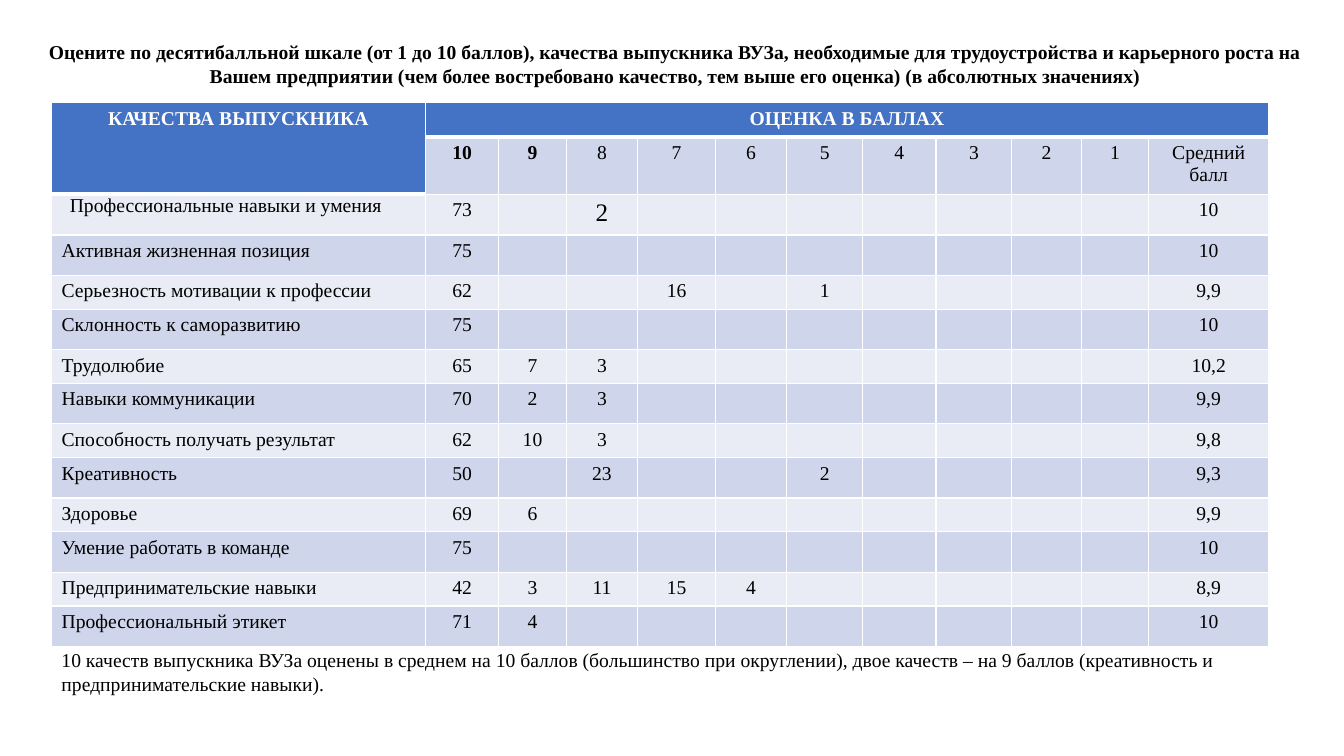
from lxml.etree import SubElement
from pptx import Presentation
from pptx.dml.color import RGBColor as RGB
from pptx.enum.text import MSO_AUTO_SIZE as AUTO, PP_ALIGN as AL
from pptx.oxml.ns import qn
from pptx.util import Cm, Pt

TITLE = ("Оцените по десятибалльной шкале (от 1 до 10 баллов), качества выпускника ВУЗа, "
         "необходимые для трудоустройства и карьерного роста на Вашем предприятии "
         "(чем более востребовано качество, тем выше его оценка) (в абсолютных значениях)")
NOTE = ("10 качеств выпускника ВУЗа оценены в среднем на 10 баллов (большинство при округлении), "
        "двое качеств – на 9 баллов (креативность и предпринимательские навыки).")
HEADS = ("КАЧЕСТВА ВЫПУСКНИКА", "ОЦЕНКА В БАЛЛАХ")
SCORES = list(range(10, 0, -1))
AVERAGE = "Средний\nбалл"
# quality, {score: number of answers}, average
QUALITIES = [
    ("Профессиональные навыки и умения", {10: 73, 8: 2}, "10"),
    ("Активная жизненная позиция", {10: 75}, "10"),
    ("Серьезность мотивации к профессии", {10: 62, 7: 16, 5: 1}, "9,9"),
    ("Склонность к саморазвитию", {10: 75}, "10"),
    ("Трудолюбие", {10: 65, 9: 7, 8: 3}, "10,2"),
    ("Навыки коммуникации", {10: 70, 9: 2, 8: 3}, "9,9"),
    ("Способность получать результат", {10: 62, 9: 10, 8: 3}, "9,8"),
    ("Креативность", {10: 50, 8: 23, 5: 2}, "9,3"),
    ("Здоровье", {10: 69, 9: 6}, "9,9"),
    ("Умение работать в команде", {10: 75}, "10"),
    ("Предпринимательские навыки", {10: 42, 9: 3, 8: 11, 7: 15, 6: 4}, "8,9"),
    ("Профессиональный этикет", {10: 71, 9: 4}, "10"),
]
COLORS = {"head": "4472C4", "dark": "CFD5EA", "light": "E9EBF5",
          "white": "FFFFFF", "black": "000000"}
FONT = "Times New Roman"
COL_W = [9.42, 1.85, 1.7, 1.8, 1.96, 1.8, 1.91, 1.85, 1.91, 1.75, 1.7, 3.02]
ROW_H = [0.86, 1.44, 1.03] + [1.02, 0.85] * 5 + [1.02]


def write(tf, text, align=AL.CENTER, color="black", bold=False, size=14):
    tf.text = text
    for p in tf.paragraphs:
        p.alignment = align
        p.font.name, p.font.size, p.font.bold = FONT, Pt(size), bold
        p.font.color.rgb = RGB.from_string(COLORS[color])


def add_text(slide, left, top, width, height, text, **style):
    tf = slide.shapes.add_textbox(Cm(left), Cm(top), Cm(width), Cm(height)).text_frame
    tf.word_wrap = True
    tf.auto_size = AUTO.SHAPE_TO_FIT_TEXT
    write(tf, text, **style)


def paint(cell, fill, bottom=1):
    """Give a cell white borders and a fill; bottom is the lower border in points."""
    tc_pr = cell._tc.get_or_add_tcPr()
    for side, width in (("L", 1), ("R", 1), ("T", 1), ("B", bottom)):
        ln = SubElement(tc_pr, qn(f"a:ln{side}"), w=str(Pt(width)))
        solid = SubElement(ln, qn("a:solidFill"))
        SubElement(solid, qn("a:srgbClr"), val=COLORS["white"])
    cell.fill.solid()
    cell.fill.fore_color.rgb = RGB.from_string(COLORS[fill])


def add_ratings(slide):
    table = slide.shapes.add_table(len(ROW_H), len(COL_W), Cm(1.3), Cm(2.59),
                                   Cm(sum(COL_W)), Cm(sum(ROW_H))).table
    for col, w in zip(table.columns, COL_W):
        col.width = Cm(w)
    for row, h in zip(table.rows, ROW_H):
        row.height = Cm(h)

    rows = [[HEADS[0], HEADS[1]] + [""] * len(SCORES),
            [""] + [str(s) for s in SCORES] + [AVERAGE]]
    rows += [[name] + [str(marks.get(s, "")) for s in SCORES] + [avg]
             for name, marks, avg in QUALITIES]
    for r, texts in enumerate(rows):
        for c, text in enumerate(texts):
            cell = table.cell(r, c)
            head = r == 0 or (r == 1 and c == 0)
            paint(cell, "head" if head else "dark" if r % 2 else "light", 3 if head else 1)
            write(cell.text_frame, text,
                  align=AL.LEFT if r > 1 and c == 0 else AL.CENTER,
                  color="white" if head else "black",
                  bold=head or (r == 1 and c < 3),
                  size=18 if (r, c) == (2, 3) else 14)
    table.cell(0, 0).merge(table.cell(1, 0))
    table.cell(0, 1).merge(table.cell(0, len(COL_W) - 1))

    first = table.cell(2, 0)
    first.margin_left = Cm(0.46)
    first.text_frame.paragraphs[0].line_spacing = Pt(12.4)


def main():
    prs = Presentation()
    prs.slide_width, prs.slide_height = Cm(33.87), Cm(19.05)
    slide = prs.slides.add_slide(prs.slide_layouts[6])
    add_text(slide, 0.89, 0.89, 32.26, 1.45, TITLE, bold=True)
    add_ratings(slide)
    add_text(slide, 1.3, 16.21, 30.71, 1.45, NOTE, align=AL.LEFT)
    prs.save("out.pptx")


if __name__ == "__main__":
    main()
